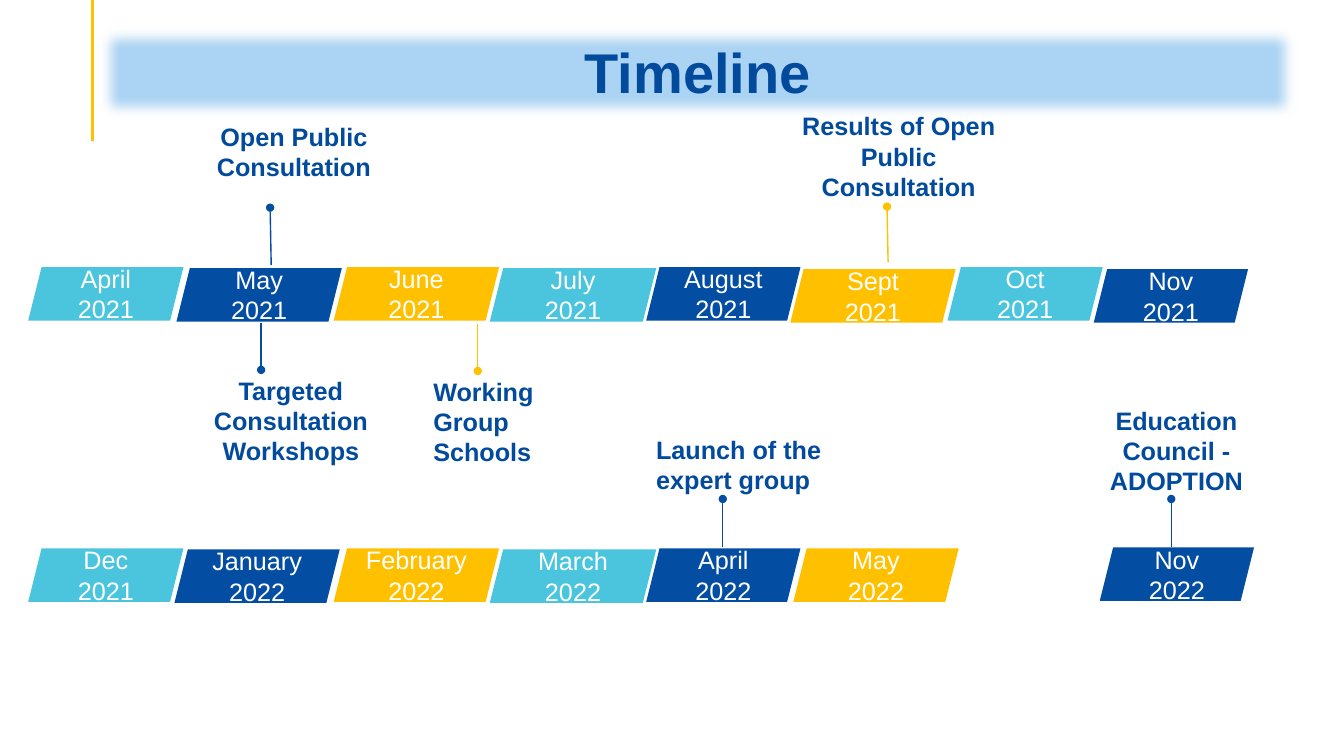
from dataclasses import dataclass

from lxml.etree import SubElement
from pptx import Presentation
from pptx.dml.color import RGBColor
from pptx.enum.shapes import MSO_CONNECTOR, MSO_SHAPE
from pptx.enum.text import MSO_ANCHOR, MSO_AUTO_SIZE, PP_ALIGN
from pptx.oxml.ns import qn
from pptx.util import Inches, Pt

WIDE, HIGH = Inches(13.33), Inches(7.5)
TEAL = RGBColor(0x4B, 0xC5, 0xDE)
BLUE = RGBColor(0x03, 0x4E, 0xA2)
GOLD = RGBColor(0xFF, 0xC0, 0x00)
NAVY = RGBColor(0x02, 0x4B, 0x9C)
PALE = RGBColor(0xAB, 0xD3, 0xF3)
WHITE = RGBColor(0xFF, 0xFF, 0xFF)
FONT = "Arial"

# All places and sizes are percent of the slide's width or height.
LEFTS = (2.1, 13.13, 24.83, 36.45, 48.08, 58.8, 70.5, 81.38)
SPANS = (11.55, 12.3, 12.3, 12.38, 11.48, 12.3, 11.55, 11.48)
ROWS = (35.33, 72.53)
TALL = 7.07
CYCLE = (TEAL, BLUE, GOLD)


@dataclass
class Month:
    row: int
    col: int
    text: str
    down: float = 0
    right: float = 0


@dataclass
class Note:
    text: str
    box: tuple[float, float, float, float]
    start: tuple[float, float]
    end: tuple[float, float]
    color: RGBColor = BLUE
    align: PP_ALIGN = PP_ALIGN.CENTER


MONTHS = (
    Month(0, 0, "April 2021"),
    Month(0, 1, "May 2021", 0.13),
    Month(0, 2, "June\n2021"),
    Month(0, 3, "July 2021", 0.13),
    Month(0, 4, "August 2021"),
    Month(0, 5, "Sept 2021", 0.27),
    Month(0, 6, "Oct 2021"),
    Month(0, 7, "Nov 2021", 0.27),
    Month(1, 0, "Dec 2021"),
    Month(1, 1, "January 2022", 0.13, -0.15),
    Month(1, 2, "February\n2022"),
    Month(1, 3, "March 2022", 0.13),
    Month(1, 4, "April 2022"),
    Month(1, 5, "May 2022", 0, 0.23),
    Month(1, 7, "Nov 2022", -0.13, 0.45),
)

NOTES = (
    Note("Open Public Consultation", (13.13, 15.33, 17.48, 9.47),
         (20.18, 35.07), (20.1, 27.47)),
    Note("Results of Open Public Consultation", (58.13, 14, 17.48, 13.47),
         (66.08, 34.67), (66, 27.33), GOLD),
    Note("Targeted Consultation Workshops", (13.43, 48.93, 16.43, 13.47),
         (19.43, 42.67), (19.43, 48.93)),
    Note("Working Group Schools", (31.5, 49.07, 10.05, 13.47),
         (35.55, 42.8), (35.55, 49.07), GOLD, PP_ALIGN.LEFT),
    Note("Launch of the expert group", (48.08, 56.8, 14.7, 9.47),
         (53.78, 72.4), (53.78, 66), BLUE, PP_ALIGN.LEFT),
    Note("Education Council - ADOPTION", (80.18, 52.93, 14.7, 13.47),
         (87.15, 72.4), (87.15, 66)),
)


def across(share: float) -> int:
    return round(WIDE * share / 100)


def down(share: float) -> int:
    return round(HIGH * share / 100)


def place(box: tuple[float, float, float, float]) -> tuple[int, int, int, int]:
    """Turn shares of the slide into left, top, width and height."""
    x, y, w, h = box
    return across(x), down(y), across(w), down(h)


def write(frame, text: str, size: int, color: RGBColor, bold: bool = False,
          align: PP_ALIGN = PP_ALIGN.CENTER) -> None:
    frame.word_wrap = True
    for i, part in enumerate(text.split("\n")):
        para = frame.add_paragraph() if i else frame.paragraphs[0]
        para.alignment = align
        run = para.add_run()
        run.text = part
        run.font.name = FONT
        run.font.size = Pt(size)
        run.font.bold = bold
        run.font.color.rgb = color


def add_block(slide, kind: MSO_SHAPE, box: tuple[float, float, float, float],
              color: RGBColor):
    shape = slide.shapes.add_shape(kind, *place(box))
    shape.shadow.inherit = False
    shape.fill.solid()
    shape.fill.fore_color.rgb = color
    shape.line.fill.background()
    shape.text_frame.vertical_anchor = MSO_ANCHOR.MIDDLE
    return shape


def add_line(slide, start: tuple[float, float], end: tuple[float, float],
             color: RGBColor, width: float, dot: bool = False) -> None:
    line = slide.shapes.add_connector(
        MSO_CONNECTOR.STRAIGHT, across(start[0]), down(start[1]),
        across(end[0]), down(end[1]))
    line.line.color.rgb = color
    line.line.width = Pt(width)
    if dot:
        SubElement(line.line._get_or_add_ln(), qn("a:tailEnd"), type="oval")
    SubElement(line._element.spPr, qn("a:effectLst"))


def add_title(slide) -> None:
    bar = add_block(slide, MSO_SHAPE.RECTANGLE, (6.98, 2.8, 89.85, 13.6), PALE)
    glow = bar._element.spPr.find(qn("a:effectLst"))
    SubElement(glow, qn("a:softEdge"), rad=str(Pt(10)))
    bar.text_frame.margin_bottom = 0
    write(bar.text_frame, "Timeline", 40, NAVY, True)
    bar.text_frame.paragraphs[0].line_spacing = 0.9


def add_month(slide, month: Month) -> None:
    box = (LEFTS[month.col] + month.right, ROWS[month.row] + month.down,
           SPANS[month.col], TALL)
    color = CYCLE[month.col % len(CYCLE)]
    shape = add_block(slide, MSO_SHAPE.PARALLELOGRAM, box, color)
    write(shape.text_frame, month.text, 18, WHITE)


def add_note(slide, note: Note) -> None:
    add_line(slide, note.start, note.end, note.color, 1, True)
    frame = slide.shapes.add_textbox(*place(note.box)).text_frame
    write(frame, note.text, 18, NAVY, True, note.align)
    frame.auto_size = MSO_AUTO_SIZE.SHAPE_TO_FIT_TEXT


def main() -> None:
    deck = Presentation()
    deck.slide_width, deck.slide_height = WIDE, HIGH
    slide = deck.slides.add_slide(deck.slide_layouts[6])
    add_line(slide, (6.9, 0), (6.9, 18.67), GOLD, 2.25)
    add_title(slide)
    for month in MONTHS:
        add_month(slide, month)
    for note in NOTES:
        add_note(slide, note)
    deck.save("out.pptx")


if __name__ == "__main__":
    main()
